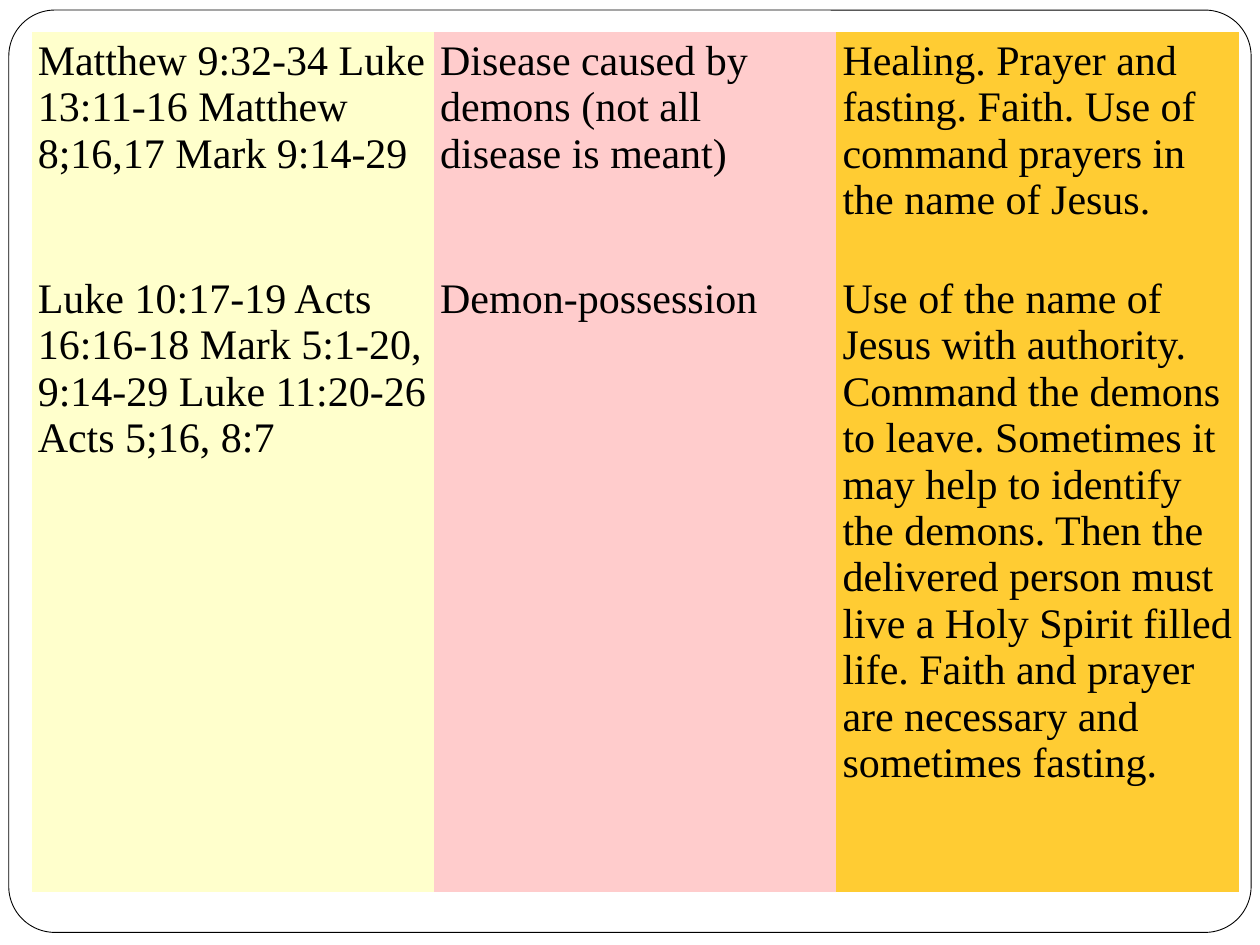
from lxml.etree import SubElement
from pptx import Presentation
from pptx.dml.color import RGBColor
from pptx.enum.shapes import MSO_SHAPE
from pptx.oxml.ns import qn
from pptx.util import Inches, Pt

COLUMN_FILLS = ["FFFFCC", "FFCCCC", "FFCC33"]
ROW_HEIGHTS = [1.89, 4.94]
ROWS = [
    ["Matthew 9:32-34 Luke 13:11-16 Matthew 8;16,17 Mark 9:14-29",
     "Disease caused by demons (not all disease is meant)",
     "Healing. Prayer and fasting. Faith. Use of command prayers in the name of Jesus."],
    ["Luke 10:17-19 Acts 16:16-18 Mark 5:1-20, 9:14-29 Luke 11:20-26 Acts 5;16, 8:7",
     "Demon-possession",
     "Use of the name of Jesus with authority. Command the demons to leave. "
     "Sometimes it may help to identify the demons. Then the delivered person must "
     "live a Holy Spirit filled life. Faith and prayer are necessary and sometimes fasting."],
]


def color(value):
    return RGBColor.from_string(value)


class SlideBuilder:
    font = "Times New Roman"
    size = Pt(24)
    ink = "000000"
    inset = Inches(0.05)

    def __init__(self, slide):
        self.s = slide

    def frame(self, left, top, width, height):
        sp = self.s.shapes.add_shape(MSO_SHAPE.ROUNDED_RECTANGLE, Inches(left),
                                     Inches(top), Inches(width), Inches(height))
        sp.adjustments[0] = 0.05
        sp.shadow.inherit = False
        sp.fill.solid()
        sp.fill.fore_color.rgb = color("FFFFFF")
        sp.line.color.rgb = color(self.ink)
        sp.line.width = Pt(0.5)

    def table(self, left, top, width, heights, rows, fills):
        table = self.s.shapes.add_table(
            len(rows), len(fills), Inches(left), Inches(top),
            Inches(width), Inches(sum(heights))).table
        table.first_row = table.horz_banding = False
        for row, height, texts in zip(table.rows, heights, rows):
            row.height = Inches(height)
            for cell, text, fill in zip(row.cells, texts, fills):
                self.cell(cell, text, fill)

    def cell(self, cell, text, fill):
        cell.margin_left = cell.margin_right = self.inset
        cell.margin_top = cell.margin_bottom = self.inset
        cell.text = text
        p = cell.text_frame.paragraphs[0]
        p.font.name = self.font
        p.font.size = self.size
        p.font.color.rgb = color(self.ink)
        # Borders come before the fill in the cell properties.
        tc_pr = cell._tc.get_or_add_tcPr()
        for side in ("a:lnL", "a:lnR", "a:lnT", "a:lnB"):
            SubElement(SubElement(tc_pr, qn(side)), qn("a:noFill"))
        cell.fill.solid()
        cell.fill.fore_color.rgb = color(fill)


def main():
    prs = Presentation()
    prs.slide_width, prs.slide_height = Inches(10), Inches(7.5)
    blank = prs.slide_layouts[6]
    builder = SlideBuilder(prs.slides.add_slide(blank))
    builder.frame(0.07, 0.08, 9.86, 7.32)
    builder.table(0.25, 0.25, 9.58, ROW_HEIGHTS, ROWS, COLUMN_FILLS)
    prs.save("out.pptx")


if __name__ == "__main__":
    main()
